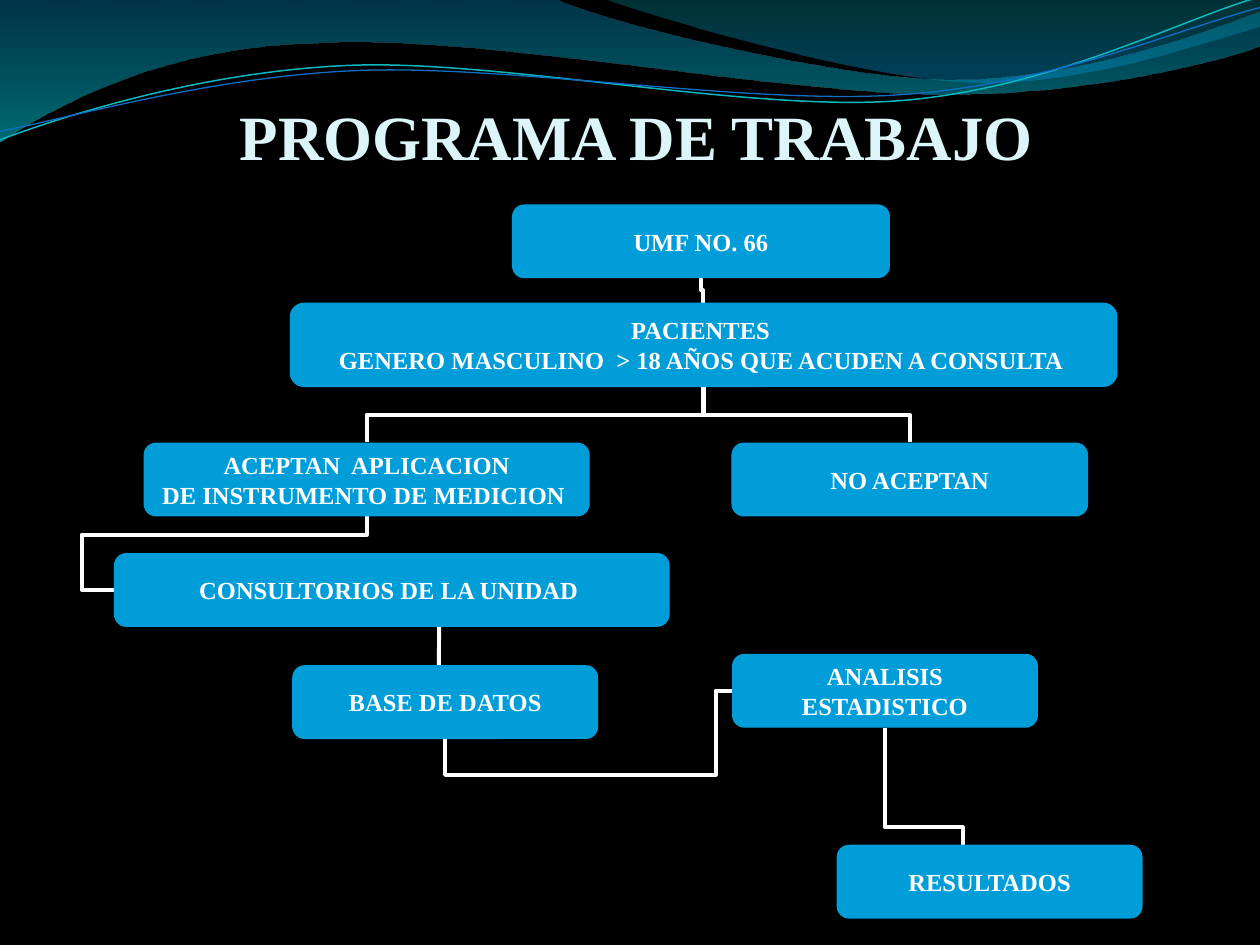
import lxml.etree
import pptx
import pptx.dml.color
import pptx.enum.shapes
import pptx.enum.text
import pptx.oxml.ns
import pptx.util

Pt = pptx.util.Pt
qn = pptx.oxml.ns.qn
FONT = "Times New Roman"
SLIDE_BOX = (0, 0, 720, 540)
TITLE_BOX = (36.7, 42.8, 653.8, 56.2)
BOX_HEIGHT = 42.2

# Each curve is a start point, then steps of one point (line) or three (Bezier)
DEEP_WAVE = [
    (0, 0), [(316.8, -0.7)],
    [(342.7, 12.2), (478.1, 45.4), (545.8, 45.4)],
    [(614.2, 45.4), (689.8, 18.7), (720, 6.5)],
    [(720.7, 25.9)],
    [(707.8, 31.7), (626.4, 54.7), (537.1, 54)],
    [(447.8, 54), (275, 20.2), (185, 24.5)],
    [(92.9, 25.9), (33.1, 59.8), (-0.7, 81.4)],
    [(0, 0)],
]
CORNER_WAVE = [
    (344.9, -0.7),
    [(366.5, 7.9), (491, 44.6), (553.7, 46.8)],
    [(616.3, 49.7), (691.9, 23), (720, 15.1)],
    [(720, 0)],
    [(344.9, -0.7)],
]
TEAL_STRAND = [
    (0, 79.9),
    [(34.6, 67), (113.8, 41), (199.4, 37.4)],
    [(284.4, 33.8), (427, 64.1), (513.4, 57.6)],
    [(599.8, 51.1), (675.4, 10.8), (718.6, -1.4)],
]
BLUE_STRAND = [
    (0, 74.9),
    [(33.8, 69.1), (118.1, 43.9), (203.8, 40.3)],
    [(290.2, 36.7), (429.8, 60.5), (516.2, 54)],
    [(601.9, 48.2), (677.5, 15.1), (720, 4.3)],
]

# Step: left, top, width, height, lines of text
STEPS = {
    "unit": (292.6, 116.8, 216, BOX_HEIGHT, ["UMF NO. 66"]),
    "patients": (165.6, 173, 473, 48.2, [
        "PACIENTES ", "GENERO MASCULINO  > 18 AÑOS QUE ACUDEN A CONSULTA "]),
    "accept": (82.1, 252.9, 254.9, BOX_HEIGHT, [
        "ACEPTAN  APLICACION", "DE INSTRUMENTO DE MEDICION "]),
    "offices": (65.1, 316, 317.5, BOX_HEIGHT, ["CONSULTORIOS DE LA UNIDAD "]),
    "refuse": (418, 252.9, 203.8, BOX_HEIGHT, ["NO ACEPTAN"]),
    "database": (167, 380.1, 174.8, BOX_HEIGHT, ["BASE DE DATOS"]),
    "analysis": (418.3, 373.6, 174.8, BOX_HEIGHT, ["ANALISIS", "ESTADISTICO"]),
    "results": (478.1, 482.7, 174.8, BOX_HEIGHT, ["RESULTADOS"]),
}


def color(hex_code):
    return pptx.dml.color.RGBColor.from_string(hex_code)


def add_curve(slide, box, curve, close):
    left, top = box[:2]
    start, *steps = curve
    builder = slide.shapes.build_freeform(Pt(left + start[0]), Pt(top + start[1]))
    builder.add_line_segments(
        [(Pt(left + x), Pt(top + y)) for step in steps for x, y in step], close=close)
    shape = builder.convert_to_shape()
    shape.shadow.inherit = False
    # Join each run of three points into one Bezier segment
    segments = iter(list(shape._element.iter(qn("a:lnTo"))))
    for step in steps:
        first, *others = [next(segments) for _ in step]
        if others:
            cubic = lxml.etree.Element(qn("a:cubicBezTo"))
            first.addprevious(cubic)
            for segment in (first, *others):
                cubic.append(segment[0])
                segment.getparent().remove(segment)
    return shape


def add_waves(slide, box):
    # Translucent bands, with stops of position, colour and opacity
    bands = [
        (DEEP_WAVE, [(0, "0074A1", 45), (1, "00C6CF", 55)]),
        (CORNER_WAVE, [(0, "00A1A9", 30), (0.8, "008BBF", 45)]),
    ]
    for curve, stops in bands:
        band = add_curve(slide, box, curve, True)
        band.line.fill.background()
        band.fill.gradient()
        band.fill.gradient_angle = 270
        for stop, (position, hex_code, opacity) in zip(band.fill.gradient_stops, stops):
            stop.position = position
            stop.color.rgb = color(hex_code)
            srgb = stop._gs.find(qn("a:srgbClr"))
            lxml.etree.SubElement(srgb, qn("a:alpha")).set("val", str(opacity * 1000))
    # Thin strands
    for curve, hex_code, weight in [(TEAL_STRAND, "0AB8BF", 0.85),
                                    (BLUE_STRAND, "0F6FC6", 0.75)]:
        strand = add_curve(slide, box, curve, False)
        strand.fill.background()
        strand.line.color.rgb = color(hex_code)
        strand.line.width = Pt(weight)


def write_lines(frame, lines, size, hex_code):
    for i, line in enumerate(lines):
        paragraph = frame.add_paragraph() if i else frame.paragraphs[0]
        paragraph.alignment = pptx.enum.text.PP_ALIGN.CENTER
        run = paragraph.add_run()
        run.text = line
        run.font.name = FONT
        run.font.size = Pt(size)
        run.font.bold = True
        run.font.color.rgb = color(hex_code)


def add_title(slide, box):
    frame = slide.shapes.add_textbox(*map(Pt, box)).text_frame
    frame.word_wrap = True
    frame.vertical_anchor = pptx.enum.text.MSO_ANCHOR.BOTTOM
    frame.margin_left = frame.margin_right = frame.margin_bottom = 0
    write_lines(frame, ["PROGRAMA DE TRABAJO"], 36, "DBF5F9")


def add_step(slide, box, lines):
    step = slide.shapes.add_shape(
        pptx.enum.shapes.MSO_SHAPE.ROUNDED_RECTANGLE, *map(Pt, box))
    step.shadow.inherit = False
    step.fill.solid()
    step.fill.fore_color.rgb = color("009DD9")
    step.line.fill.background()
    frame = step.text_frame
    frame.word_wrap = False
    frame.vertical_anchor = pptx.enum.text.MSO_ANCHOR.MIDDLE
    frame.margin_left = frame.margin_right = frame.margin_top = frame.margin_bottom = 0
    write_lines(frame, lines, 14, "FFFFFF")


def add_link(slide, start, end, kind="STRAIGHT", preset=None, bends=()):
    link = slide.shapes.add_connector(
        getattr(pptx.enum.shapes.MSO_CONNECTOR, kind), *map(Pt, (*start, *end)))
    link.line.color.rgb = color("FFFFFF")
    link.line.width = Pt(2.25)
    properties = link._element.spPr
    lxml.etree.SubElement(properties, qn("a:effectLst"))
    if preset:
        geometry = properties.find(qn("a:prstGeom"))
        geometry.set("prst", preset)
        guides = geometry.get_or_add_avLst()
        for i, bend in enumerate(bends, 1):
            guide = lxml.etree.SubElement(guides, qn("a:gd"))
            guide.set("name", f"adj{i}")
            guide.set("fmla", f"val {round(bend * 100000)}")
    return link


def add_drop(slide, start, end, bend=0.5):
    """Elbow that goes down, across and down: a turned three-part connector."""
    (x1, y1), (x2, y2) = start, end
    middle_x, middle_y = (x1 + x2) / 2, (y1 + y2) / 2
    half_drop, half_shift = (y2 - y1) / 2, abs(x2 - x1) / 2
    side = 1 if x2 > x1 else -1
    link = add_link(slide,
                    (middle_x + side * half_drop, middle_y - half_shift),
                    (middle_x - side * half_drop, middle_y + half_shift),
                    "ELBOW", "bentConnector3", [bend])
    link._element.spPr.find(qn("a:xfrm")).set("rot", str((180 + side * 90) * 60000))


def add_side_entry(slide, start, end, lane_x, lane_y):
    """Elbow from the left side of a step round to the bottom of another."""
    bends = [(lane_x - start[0]) / (end[0] - start[0]),
             (lane_y - start[1]) / (end[1] - start[1])]
    add_link(slide, start, end, "ELBOW", "bentConnector4", bends)


def add_flow(slide, steps):
    top, bottom, left = {}, {}, {}
    for key, (x, y, width, height, _) in steps.items():
        top[key] = (x + width / 2, y)
        bottom[key] = (x + width / 2, y + height)
        left[key] = (x, y + height / 2)
    patients_x, patients_bottom = bottom["patients"]
    # Links lie behind the steps
    add_drop(slide, bottom["analysis"], (550.1, top["results"][1]), 0.85)
    add_side_entry(slide, left["analysis"], bottom["database"], 409, 442.8)
    add_link(slide, (250.7, 386.6), (251, 354.2))
    add_drop(slide, (patients_x - 0.3, patients_bottom), top["refuse"])
    add_side_entry(slide, left["offices"], bottom["accept"], 46.8, 305.5)
    add_drop(slide, (patients_x + 0.4, patients_bottom), top["accept"])
    add_drop(slide, bottom["unit"], (patients_x - 0.3, top["patients"][1]))
    for *box, lines in steps.values():
        add_step(slide, box, lines)


def main():
    deck = pptx.Presentation()
    deck.slide_width, deck.slide_height = map(Pt, SLIDE_BOX[2:])
    slide = deck.slides.add_slide(deck.slide_layouts[6])
    slide.background.fill.solid()
    slide.background.fill.fore_color.rgb = color("000000")
    add_waves(slide, SLIDE_BOX)
    add_title(slide, TITLE_BOX)
    add_flow(slide, STEPS)
    deck.save("out.pptx")


if __name__ == "__main__":
    main()
